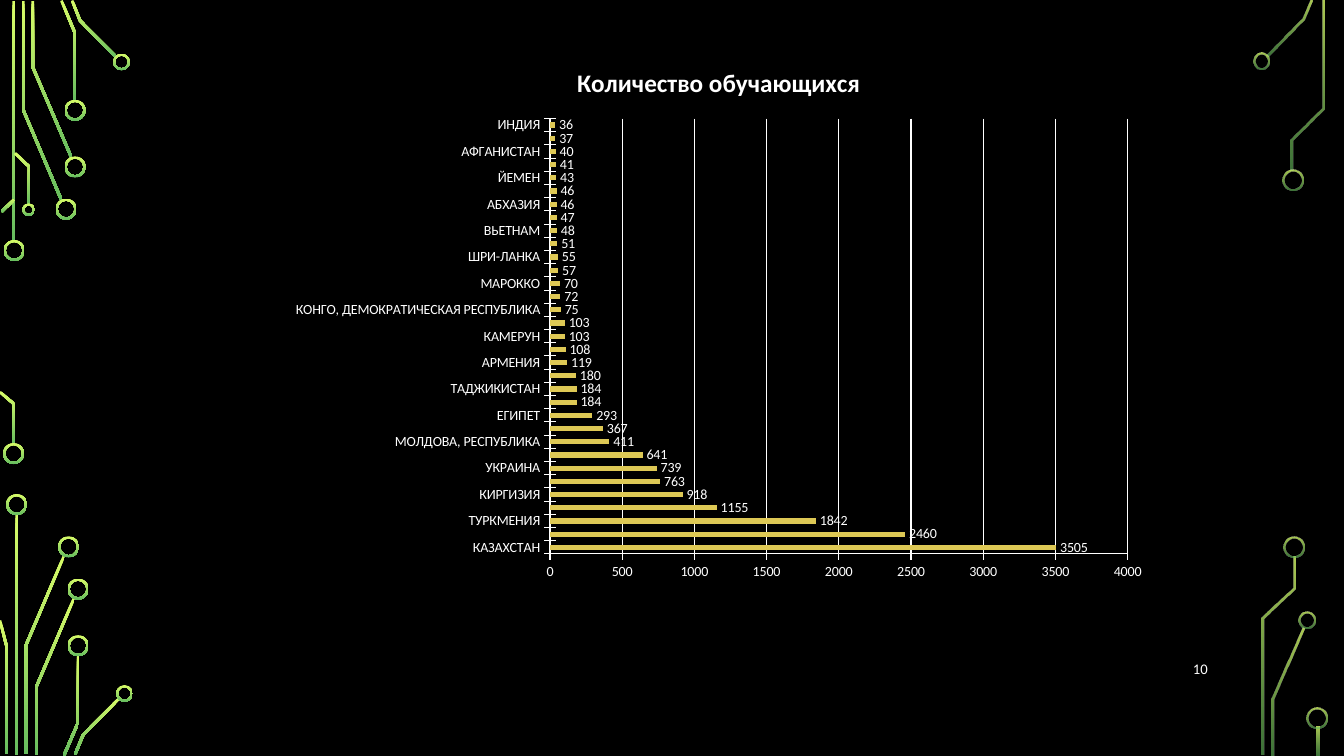
import math

from lxml import etree
from pptx import Presentation
from pptx.chart.data import CategoryChartData
from pptx.dml.color import RGBColor
from pptx.enum.chart import XL_CHART_TYPE, XL_LABEL_POSITION, XL_TICK_MARK
from pptx.enum.shapes import MSO_SHAPE
from pptx.enum.text import MSO_ANCHOR, PP_ALIGN
from pptx.oxml.ns import qn
from pptx.util import Pt

BAR_CLUSTERED = XL_CHART_TYPE.BAR_CLUSTERED
OUTSIDE_END = XL_LABEL_POSITION.OUTSIDE_END
CROSS = XL_TICK_MARK.CROSS
NO_TICK = XL_TICK_MARK.NONE
DONUT = MSO_SHAPE.DONUT
MIDDLE = MSO_ANCHOR.MIDDLE
CENTER, RIGHT = PP_ALIGN.CENTER, PP_ALIGN.RIGHT

FONT = "Calibri"
COLORS = {"background": "000000", "text": "FFFFFF", "bar": "DDC855",
          "lime": "D8FC68", "green": "66BD5F"}
TRACE_WIDTH = 1.9
RING_WIDTH = 1.5

CHART_TITLE = "Количество обучающихся"
# Every second bar carries a country label.
COUNTRIES = [
    "КАЗАХСТАН", "ТУРКМЕНИЯ", "КИРГИЗИЯ", "УКРАИНА", "МОЛДОВА, РЕСПУБЛИКА",
    "ЕГИПЕТ", "ТАДЖИКИСТАН", "АРМЕНИЯ", "КАМЕРУН",
    "КОНГО, ДЕМОКРАТИЧЕСКАЯ РЕСПУБЛИКА", "МАРОККО", "ШРИ-ЛАНКА", "ВЬЕТНАМ",
    "АБХАЗИЯ", "ЙЕМЕН", "АФГАНИСТАН", "ИНДИЯ",
]
STUDENT_COUNTS = [
    3505, 2460, 1842, 1155, 918, 763, 739, 641, 411, 367, 293, 184, 184, 180,
    119, 108, 103, 103, 75, 72, 70, 57, 55, 51, 48, 47, 46, 46, 43, 41, 40,
    37, 36,
]

# Circuit decoration: opacity of both gradient ends, centre lines of the
# traces, and rings as (centre x, centre y, diameter).
CIRCUITS = [
    {"opacity": (100, 100),
     "traces": [
         [(9.7, 0.7), (9.7, 172.8)],
         [(16.6, 0.7), (16.6, 78.5), (43.9, 142.9)],
         [(23.4, 0.7), (23.4, 47.9), (51.1, 112.7)],
         [(43.9, 0.4), (53.6, 23.8), (53.6, 72)],
         [(51.5, 0.4), (57.2, 14.8), (83.2, 41)],
         [(10.1, 142.6), (1.1, 151.2)],
         [(0, 280), (10.1, 288.7), (10.1, 317.5)],
         [(10.8, 109.4), (20.9, 119.2), (20.9, 146.2)],
         [(11.9, 367.2), (11.9, 539.3)],
         [(18.4, 538.6), (18.4, 461.2), (45.7, 397.1)],
         [(4.7, 538.6), (4.7, 461.5), (0, 443.2)],
         [(25.6, 539.3), (25.6, 491.4), (52.9, 427.3)],
         [(45.7, 539.6), (55.8, 516.2), (55.8, 468)],
         [(53.6, 538.9), (59.4, 524.9), (85, 499)],
     ],
     "rings": [
         (10.1, 178.9, 15), (9.7, 324, 15), (47.2, 149.4, 15),
         (53.6, 119.2, 15), (53.6, 78.8, 15), (86.8, 44.3, 12),
         (20.5, 149.8, 9), (11.9, 360.4, 15), (49, 390.6, 15),
         (55.8, 420.8, 15), (55.8, 461.2, 15), (88.9, 495.4, 12),
     ]},
    {"opacity": (80, 60),
     "traces": [
         [(905, 40), (930.6, 14), (936.4, 0.4)],
         [(909, 539.3), (909, 499.3), (931, 448.9)],
         [(923, 121.7), (923, 99.7), (945, 77.4), (945, 0.7)],
         [(901.8, 539.3), (901.8, 441.7), (924.1, 420.1), (924.1, 397.4)],
         [(941.2, 519.1), (941.2, 539.3)],
     ],
     "rings": [
         (901.1, 43.6, 12), (923.4, 128.5, 15), (933.5, 443.2, 12),
         (924.1, 390.6, 15), (940.7, 512.6, 15),
     ]},
]


def rgb(name):
    return RGBColor.from_string(COLORS[name])


def set_text(text_frame, text, size, bold=False, align=CENTER):
    paragraph = text_frame.paragraphs[0]
    paragraph.alignment = align
    run = paragraph.add_run()
    run.text = text
    font = run.font
    font.name, font.size, font.bold = FONT, Pt(size), bold
    font.color.rgb = rgb("text")


def style_circuit_shape(shape, opacity):
    """Fill from lime at the top to green at the bottom, without outline."""
    shape.shadow.inherit = False
    shape.line.fill.background()
    shape.fill.gradient()
    shape.fill.gradient_angle = 270
    for stop, name in zip(shape.fill.gradient_stops, ("lime", "green")):
        stop.color.rgb = rgb(name)
    if min(opacity) < 100:
        colors = shape.element.spPr.find(qn("a:gradFill")).iter(qn("a:srgbClr"))
        for color, percent in zip(colors, opacity):
            etree.SubElement(color, qn("a:alpha")).set("val", str(percent * 1000))


def trace_outline(points):
    """Widen a centre line to a closed band with mitred corners."""
    normals = []
    for (x1, y1), (x2, y2) in zip(points, points[1:]):
        length = math.hypot(x2 - x1, y2 - y1)
        normals.append(((y1 - y2) / length, (x2 - x1) / length))
    left, right = [], []
    for (x, y), (ax, ay), (bx, by) in zip(points, normals[:1] + normals,
                                          normals + normals[-1:]):
        factor = TRACE_WIDTH / 2 / (1 + ax * bx + ay * by)
        dx, dy = (ax + bx) * factor, (ay + by) * factor
        left.append((Pt(x + dx), Pt(y + dy)))
        right.append((Pt(x - dx), Pt(y - dy)))
    return left + right[::-1]


def add_circuit(slide, opacity, traces, rings):
    for points in traces:
        outline = trace_outline(points)
        builder = slide.shapes.build_freeform(*outline[0])
        builder.add_line_segments(outline[1:], close=True)
        style_circuit_shape(builder.convert_to_shape(), opacity)
    for x, y, diameter in rings:
        ring = slide.shapes.add_shape(DONUT, Pt(x - diameter / 2), Pt(y - diameter / 2),
                                      Pt(diameter), Pt(diameter))
        ring.adjustments[0] = RING_WIDTH / diameter
        style_circuit_shape(ring, opacity)


def add_students_chart(slide):
    data = CategoryChartData()
    data.categories = [COUNTRIES[index // 2] if index % 2 == 0 else ""
                       for index in range(len(STUDENT_COUNTS))]
    data.add_series(CHART_TITLE, STUDENT_COUNTS)
    chart = slide.shapes.add_chart(BAR_CLUSTERED, Pt(198.7), Pt(31.7),
                                   Pt(629.3), Pt(390.2), data).chart
    chart.font.name, chart.font.size = FONT, Pt(10)
    chart.font.color.rgb = rgb("text")
    chart.has_legend = False
    chart.has_title = True
    set_text(chart.chart_title.text_frame, CHART_TITLE, 18, bold=True)
    chart.chart_title.include_in_layout = False

    for axis in (chart.category_axis, chart.value_axis):
        axis.major_tick_mark = CROSS
        axis.minor_tick_mark = NO_TICK
        axis.format.line.color.rgb = rgb("text")
    chart.category_axis.has_major_gridlines = False
    chart.value_axis.has_major_gridlines = True
    chart.value_axis.major_gridlines.format.line.color.rgb = rgb("text")

    plot = chart.plots[0]
    plot.gap_width = 150
    plot.vary_by_categories = False
    fill = plot.series[0].format.fill
    fill.solid()
    fill.fore_color.rgb = rgb("bar")
    plot.has_data_labels = True
    plot.data_labels.show_value = True
    plot.data_labels.position = OUTSIDE_END


def main():
    presentation = Presentation()
    presentation.slide_width, presentation.slide_height = Pt(960), Pt(540)
    slide = presentation.slides.add_slide(presentation.slide_layouts[6])
    slide.background.fill.solid()
    slide.background.fill.fore_color.rgb = rgb("background")

    for circuit in CIRCUITS:
        add_circuit(slide, **circuit)

    page_number = slide.shapes.add_textbox(Pt(809.3), Pt(463), Pt(60.5), Pt(28.8))
    page_number.text_frame.word_wrap = True
    page_number.text_frame.vertical_anchor = MIDDLE
    set_text(page_number.text_frame, "10", 10.5, align=RIGHT)

    add_students_chart(slide)
    presentation.save("out.pptx")


if __name__ == "__main__":
    main()
